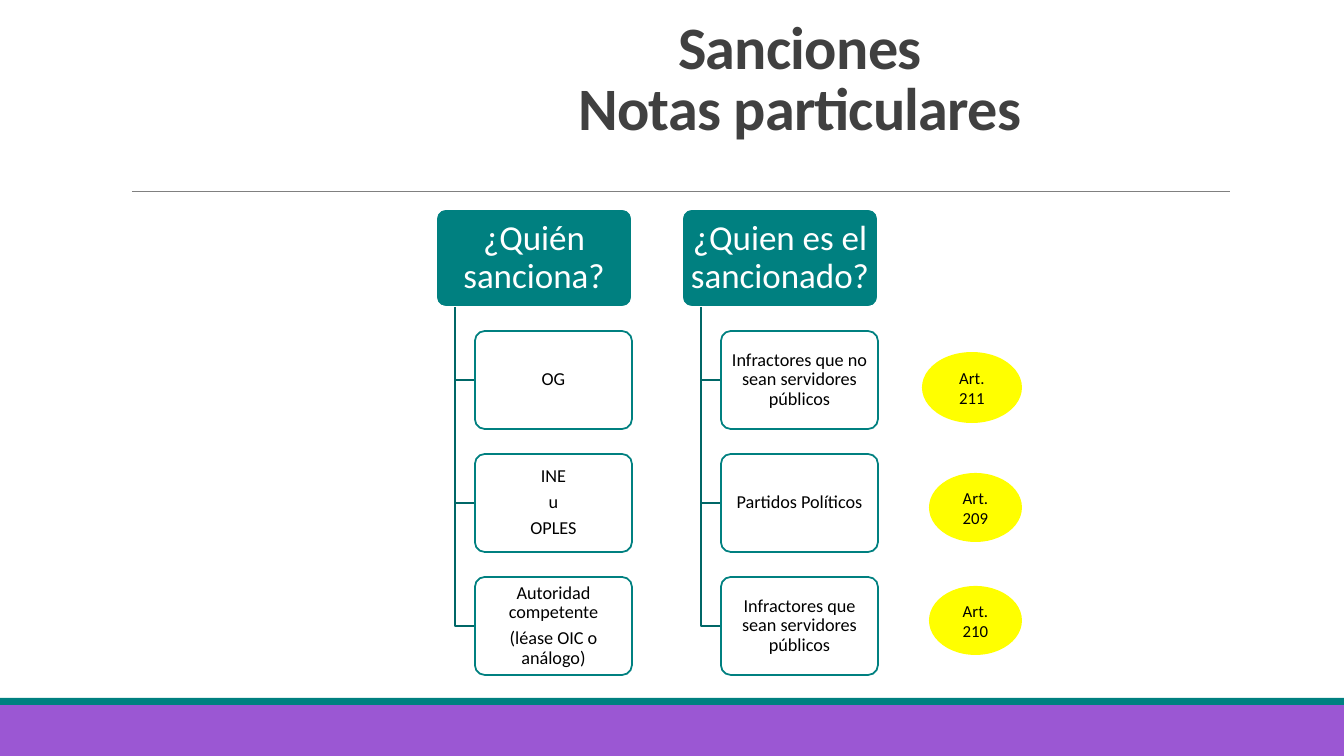
from dataclasses import dataclass

from lxml.etree import SubElement
from pptx import Presentation
from pptx.dml.color import RGBColor
from pptx.enum.shapes import MSO_CONNECTOR, MSO_SHAPE
from pptx.enum.text import MSO_ANCHOR, PP_ALIGN
from pptx.oxml.ns import qn
from pptx.util import Emu, Pt

PAGE_WIDTH, PAGE_HEIGHT = 1344, 756
EMU_PER_PX = 12192000 / PAGE_WIDTH
FONT = "Calibri"
COLORS = {
    "purple": "9B57D3", "teal": "008080", "dark_teal": "006767",
    "gray": "808080", "title": "404040", "white": "FFFFFF",
    "black": "000000", "yellow": "FFFF00",
}

# Layout of the two trees
TREE_LEFT, TREE_STEP = 436, 246
HEADER_TOP, HEADER_WIDTH = 209, 196
BOX_TOP, BOX_STEP, BOX_INDENT, BOX_WIDTH = 331, 123, 39, 157
BOX_HEIGHT = 98
TRUNK_INDENT = 19


@dataclass
class Tree:
    header: str
    boxes: list[list[str]]


@dataclass
class Article:
    text: str
    left: int
    top: int
    width: int
    height: int


TREES = [
    Tree("¿Quién sanciona?", [
        ["OG"],
        ["INE", "u", "OPLES"],
        ["Autoridad competente", "(léase OIC o análogo)"],
    ]),
    Tree("¿Quien es el sancionado?", [
        ["Infractores que no sean servidores públicos"],
        ["Partidos Políticos"],
        ["Infractores que sean servidores públicos"],
    ]),
]
ARTICLES = [
    Article("Art. 211", 922, 352, 100, 71),
    Article("Art. 209", 929, 473, 93, 69),
    Article("Art. 210", 929, 586, 93, 69),
]


def px(value: float) -> Emu:
    return Emu(round(value * EMU_PER_PX))


def color(name: str) -> RGBColor:
    return RGBColor.from_string(COLORS[name])


def write(shape, lines: list[str], size: float, ink: str, spacing: float = 1.0,
          margins: tuple[int, int] = (10, 5), anchor=MSO_ANCHOR.MIDDLE) -> None:
    """Fill a shape with centred paragraphs; margins are side and top/bottom."""
    frame = shape.text_frame
    frame.word_wrap = True
    frame.vertical_anchor = anchor
    frame.margin_left = frame.margin_right = px(margins[0])
    frame.margin_top = frame.margin_bottom = px(margins[1])
    for index, line in enumerate(lines):
        para = frame.add_paragraph() if index else frame.paragraphs[0]
        para.text = line
        para.alignment = PP_ALIGN.CENTER
        para.line_spacing = spacing
        if index:
            para.space_before = Pt(4.5)
        para.font.name, para.font.size = FONT, Pt(size)
        para.font.color.rgb = color(ink)


def add_block(page, kind, left: int, top: int, width: int, height: int,
              fill: str, line: str | None = None):
    shape = page.shapes.add_shape(kind, px(left), px(top), px(width), px(height))
    shape.shadow.inherit = False
    shape.fill.solid()
    shape.fill.fore_color.rgb = color(fill)
    if line:
        shape.line.color.rgb = color(line)
        shape.line.width = Pt(1.25)
    else:
        shape.line.fill.background()
    if kind == MSO_SHAPE.ROUNDED_RECTANGLE:
        shape.adjustments[0] = 0.1
    return shape


def add_branch(page, left: int, top: int, right: int, bottom: int) -> None:
    builder = page.shapes.build_freeform(px(left), px(top))
    builder.add_line_segments(
        [(px(left), px(bottom)), (px(right), px(bottom))], close=False)
    branch = builder.convert_to_shape()
    branch.shadow.inherit = False
    branch.fill.background()
    branch.line.color.rgb = color("dark_teal")
    branch.line.width = Pt(1.25)


def add_title(page) -> None:
    box = page.shapes.add_textbox(px(272), px(16), px(1056), px(132))
    write(box, ["Sanciones\vNotas particulares"], 43, "title", 0.85,
          anchor=MSO_ANCHOR.BOTTOM)
    font = box.text_frame.paragraphs[0].font
    font.bold = True
    font._element.set("spc", "-50")


def add_rule(page) -> None:
    rule = page.shapes.add_connector(
        MSO_CONNECTOR.STRAIGHT, px(132), px(191), px(1230), px(191))
    rule.line.color.rgb = color("gray")
    rule.line.width = Pt(0.5)
    SubElement(rule._element.spPr, qn("a:effectLst"))


def add_tree(page, tree: Tree, left: int) -> None:
    header = add_block(page, MSO_SHAPE.ROUNDED_RECTANGLE, left, HEADER_TOP,
                       HEADER_WIDTH, BOX_HEIGHT, "teal", "white")
    write(header, [tree.header], 25, "white", 0.9, (3, 3))
    box_left = left + BOX_INDENT
    for row, lines in enumerate(tree.boxes):
        top = BOX_TOP + row * BOX_STEP
        add_branch(page, left + TRUNK_INDENT, HEADER_TOP + BOX_HEIGHT,
                   box_left, top + BOX_HEIGHT // 2)
        box = add_block(page, MSO_SHAPE.ROUNDED_RECTANGLE, box_left, top,
                        BOX_WIDTH, BOX_HEIGHT, "white", "teal")
        write(box, lines, 13, "black", 0.9, (3, 2))


def main() -> None:
    deck = Presentation()
    deck.slide_width, deck.slide_height = px(PAGE_WIDTH), px(PAGE_HEIGHT)
    page = deck.slides.add_slide(deck.slide_layouts[6])

    # Footer bands, rule and title
    add_block(page, MSO_SHAPE.RECTANGLE, 0, 705, PAGE_WIDTH, 51, "purple")
    add_block(page, MSO_SHAPE.RECTANGLE, 0, 698, PAGE_WIDTH, 7, "teal")
    add_rule(page)
    add_title(page)

    # Trees of sanctioning and sanctioned parties
    for column, tree in enumerate(TREES):
        add_tree(page, tree, TREE_LEFT + column * TREE_STEP)

    # Article markers
    for article in ARTICLES:
        marker = add_block(page, MSO_SHAPE.OVAL, article.left, article.top,
                           article.width, article.height, "yellow")
        write(marker, [article.text], 12, "black")

    deck.save("out.pptx")


if __name__ == "__main__":
    main()
